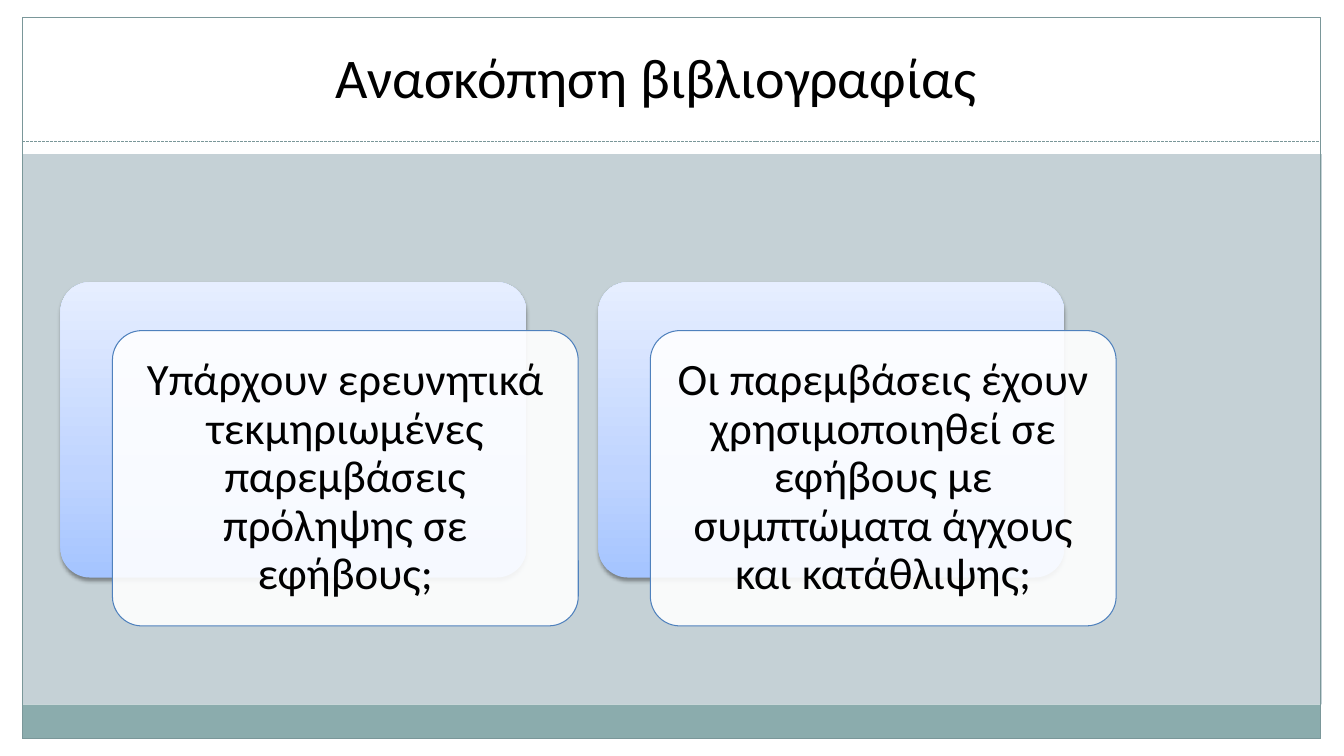
from pptx import Presentation
from pptx.dml.color import RGBColor
from pptx.enum.dml import MSO_LINE
from pptx.enum.shapes import MSO_CONNECTOR, MSO_SHAPE
from pptx.enum.text import MSO_ANCHOR, PP_ALIGN
from pptx.oxml import parse_xml
from pptx.oxml.ns import nsdecls, qn
from pptx.util import Inches, Pt
from lxml.etree import SubElement

TITLE = "Ανασκόπηση βιβλιογραφίας"
QUESTIONS = [
    "Υπάρχουν ερευνητικά τεκμηριωμένες παρεμβάσεις πρόληψης σε εφήβους;",
    "Οι παρεμβάσεις έχουν χρησιμοποιηθεί σε εφήβους με συμπτώματα άγχους και κατάθλιψης;",
]

THEME = {
    "font": "Calibri", "title_size": 40, "card_size": 32, "text": "000000",
    "body": "C5D1D6", "footer": "8BACAD", "frame": "7A9799", "frame_width": 0.72,
    "card": "FFFFFF", "card_opacity": 90, "card_line": "4F81BD", "card_line_width": 0.75,
    "gradient": [(0, "A4C4FF"), (35, "BFD4FF"), (100, "E6EEFF")],
    "shadow": "000000", "shadow_opacity": 38,
}

FRAME_LEFT, FRAME_WIDTH = 0.22, 12.88
CARD_WIDTH, CARD_HEIGHT = 4.62, 2.93
CARD_LEFT, CARD_TOP, CARD_STEP = 0.6, 2.8, 5.335
FRONT_SHIFT_X, FRONT_SHIFT_Y = 0.515, 0.48


def rgb(name):
    return RGBColor.from_string(THEME[name])


def add_box(page, kind, left, top, width, height, fill=None, line=None, line_width=0.75):
    box = page.shapes.add_shape(kind, Inches(left), Inches(top), Inches(width), Inches(height))
    box.shadow.inherit = False
    if fill:
        box.fill.solid()
        box.fill.fore_color.rgb = rgb(fill)
    else:
        box.fill.background()
    if line:
        box.line.color.rgb = rgb(line)
        box.line.width = Pt(line_width)
    else:
        box.line.fill.background()
    return box


def write_text(box, text, size, inset=0, anchor=MSO_ANCHOR.TOP, line_spacing=None):
    frame = box.text_frame
    frame.word_wrap = True
    frame.vertical_anchor = anchor
    frame.margin_left = frame.margin_right = Inches(inset)
    frame.margin_top = frame.margin_bottom = Inches(inset)
    para = frame.paragraphs[0]
    para.alignment = PP_ALIGN.CENTER
    para.line_spacing = line_spacing
    span = para.add_run()
    span.text = text
    span.font.name = THEME["font"]
    span.font.size = Pt(THEME[size])
    span.font.color.rgb = rgb("text")


def set_gradient(box):
    """Fill the box from bottom to top with the theme's colour stops."""
    box.fill.gradient()
    box.fill.gradient_angle = 90
    stops = box.element.spPr.find(qn("a:gradFill")).find(qn("a:gsLst"))
    for stop in list(stops):
        stops.remove(stop)
    for position, color in THEME["gradient"]:
        stop = SubElement(stops, qn("a:gs"), pos=str(position * 1000))
        SubElement(stop, qn("a:srgbClr"), val=color)


def set_shadow(box):
    effects = box.element.spPr.find(qn("a:effectLst"))
    effects.append(parse_xml(
        f'<a:outerShdw {nsdecls("a")} blurRad="{Pt(3.1)}" dist="{Pt(1.6)}" dir="5400000" '
        f'rotWithShape="0"><a:srgbClr val="{THEME["shadow"]}">'
        f'<a:alpha val="{THEME["shadow_opacity"] * 1000}"/></a:srgbClr></a:outerShdw>'))


def set_opacity(box, percent):
    color = box.element.spPr.find(qn("a:solidFill")).find(qn("a:srgbClr"))
    SubElement(color, qn("a:alpha"), val=str(percent * 1000))


def add_frame(page):
    add_box(page, MSO_SHAPE.RECTANGLE, FRAME_LEFT, 1.53, 12.89, 5.46, fill="body")
    add_box(page, MSO_SHAPE.RECTANGLE, FRAME_LEFT, 6.99, FRAME_WIDTH, 0.34, fill="footer")
    add_box(page, MSO_SHAPE.RECTANGLE, FRAME_LEFT, 0.17, FRAME_WIDTH, 7.16,
            line="frame", line_width=THEME["frame_width"])
    rule = page.shapes.add_connector(
        MSO_CONNECTOR.STRAIGHT, Inches(FRAME_LEFT), Inches(1.4),
        Inches(FRAME_LEFT + FRAME_WIDTH), Inches(1.4))
    rule.line.color.rgb = rgb("frame")
    rule.line.width = Pt(THEME["frame_width"])
    rule.line.dash_style = MSO_LINE.SQUARE_DOT
    SubElement(rule.element.spPr, qn("a:effectLst"))


def add_question(page, index, question):
    left = CARD_LEFT + index * CARD_STEP
    back = add_box(page, MSO_SHAPE.ROUNDED_RECTANGLE, left, CARD_TOP, CARD_WIDTH, CARD_HEIGHT)
    set_gradient(back)
    set_shadow(back)
    front = add_box(page, MSO_SHAPE.ROUNDED_RECTANGLE, left + FRONT_SHIFT_X,
                    CARD_TOP + FRONT_SHIFT_Y, CARD_WIDTH, CARD_HEIGHT, fill="card",
                    line="card_line", line_width=THEME["card_line_width"])
    set_opacity(front, THEME["card_opacity"])
    for card in (back, front):
        card.adjustments[0] = 0.1
    write_text(front, question, "card_size", inset=0.13,
               anchor=MSO_ANCHOR.MIDDLE, line_spacing=0.9)


def main():
    deck = Presentation()
    deck.slide_width, deck.slide_height = Inches(13.33), Inches(7.5)
    page = deck.slides.add_slide(deck.slide_layouts[6])
    add_frame(page)
    title = page.shapes.add_textbox(Inches(1.13), Inches(0.42), Inches(10.75), Inches(1.45))
    write_text(title, TITLE, "title_size")
    for index, question in enumerate(QUESTIONS):
        add_question(page, index, question)
    deck.save("out.pptx")


if __name__ == "__main__":
    main()
